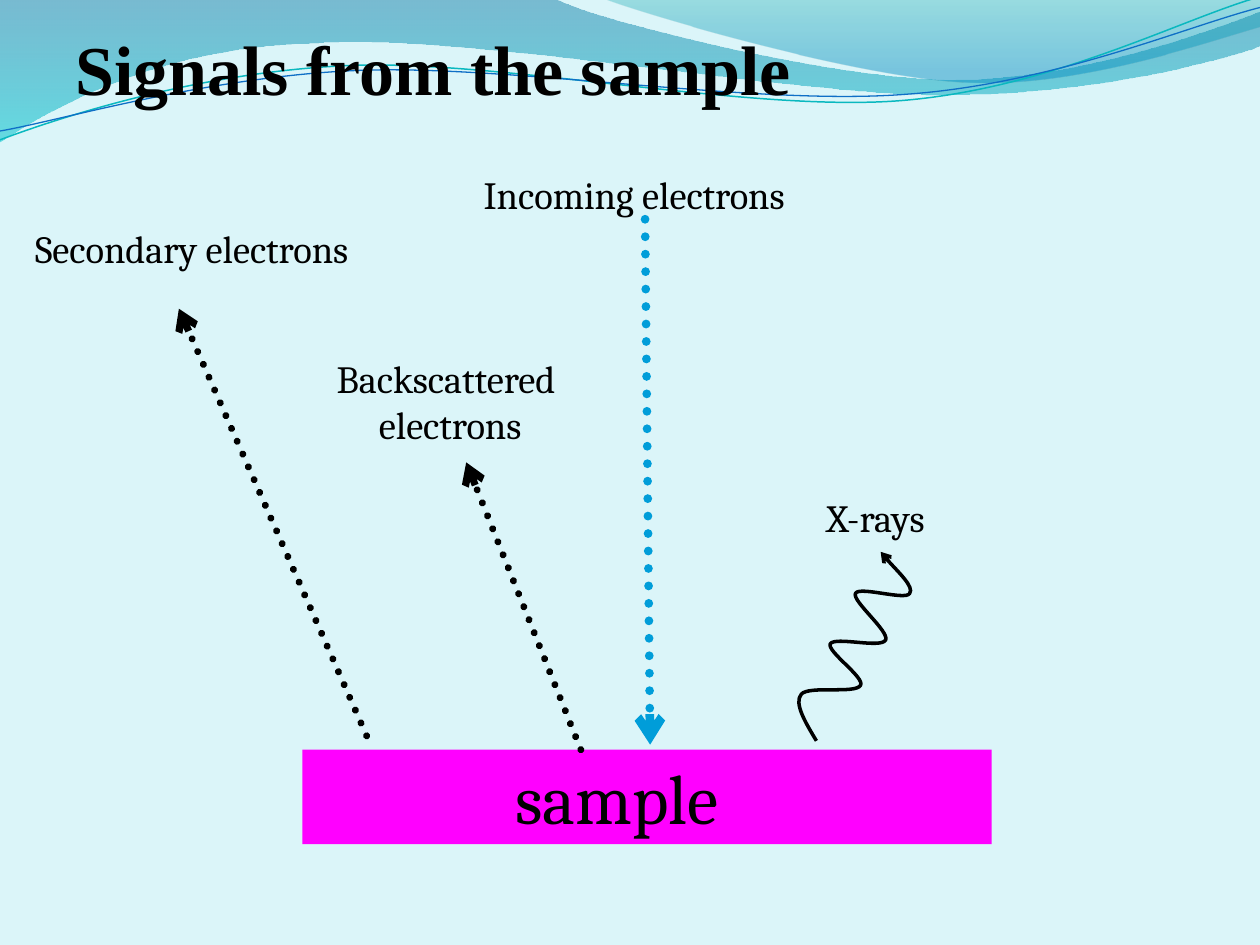
import dataclasses
import math

import lxml.etree
import pptx
import pptx.dml.color
import pptx.enum.dml
import pptx.enum.shapes
import pptx.enum.text
import pptx.oxml.ns
import pptx.util

Inches = pptx.util.Inches
Align = pptx.enum.text.PP_ALIGN
Anchor = pptx.enum.text.MSO_ANCHOR


@dataclasses.dataclass(frozen=True)
class Theme:
    background: str = "DBF5F9"
    ink: str = "000000"
    beam: str = "009DD9"
    sample: str = "FF00FF"
    teal_line: str = "0AB8BF"
    blue_line: str = "0F6FC6"
    broad_wave: tuple = ((0, "0074A1", 45), (1, "00C6CF", 55))
    right_wave: tuple = ((0, "00A1A9", 30), (0.8, "008BBF", 45))
    title_font: str = "Times New Roman"
    body_font: str = "Cambria"
    large: int = 40
    label: int = 22


THEME = Theme()


def color(code):
    return pptx.dml.color.RGBColor.from_string(code)


def add_child(parent, tag, **attributes):
    return lxml.etree.SubElement(parent, pptx.oxml.ns.qn(tag), **attributes)


def write(frame, text, size=THEME.label, font=THEME.body_font, bold=False, align=Align.LEFT):
    for index, line in enumerate(text.split("\n")):
        para = frame.paragraphs[0] if index == 0 else frame.add_paragraph()
        para.alignment = align
        span = para.add_run()
        span.text = line
        span.font.size = pptx.util.Pt(size)
        span.font.name = font
        span.font.bold = bold
        span.font.color.rgb = color(THEME.ink)


def turn(point, center, degrees):
    angle = math.radians(degrees)
    x, y = point[0] - center[0], point[1] - center[1]
    return (center[0] + x * math.cos(angle) - y * math.sin(angle),
            center[1] + x * math.sin(angle) + y * math.cos(angle))


class Painter:
    """Draws styled elements on the current slide."""

    def __init__(self, page, theme):
        self.page = page
        self.theme = theme
        page.background.fill.solid()
        page.background.fill.fore_color.rgb = color(theme.background)

    def style_line(self, line, code, width, arrow=False):
        line.color.rgb = color(code)
        line.width = pptx.util.Pt(width)
        if arrow:
            add_child(line._get_or_add_ln(), "a:tailEnd", type="arrow")

    def outline(self, start, pieces, closed, center=(0, 0), rotation=0):
        points = [start] + [piece[i:i + 2] for piece in pieces for i in range(0, len(piece), 2)]
        points = [tuple(map(Inches, turn(point, center, -rotation))) for point in points]
        builder = self.page.shapes.build_freeform(*points[0])
        builder.add_line_segments(points[1:], close=closed)
        shape = builder.convert_to_shape()
        shape.shadow.inherit = False
        shape.rotation = rotation
        segments = iter(list(shape._element.spPr.iter(pptx.oxml.ns.qn("a:lnTo"))))
        for piece in pieces:
            segment = next(segments)
            if len(piece) == 6:
                segment.tag = pptx.oxml.ns.qn("a:cubicBezTo")
                for follower in (next(segments), next(segments)):
                    segment.append(follower[0])
                    follower.getparent().remove(follower)
        return shape

    def wave(self, start, pieces, stops):
        shape = self.outline(start, pieces, True)
        shape.line.fill.background()
        shape.fill.gradient()
        shape.fill.gradient_angle = 270
        for stop, (position, code, opacity) in zip(shape.fill.gradient_stops, stops):
            stop.position = position
            stop.color.rgb = color(code)
        tints = shape._element.spPr.iter(pptx.oxml.ns.qn("a:srgbClr"))
        for tint, (position, code, opacity) in zip(tints, stops):
            add_child(tint, "a:alpha", val=str(opacity * 1000))

    def curve(self, start, pieces, code, width, arrow=False, **placing):
        shape = self.outline(start, pieces, False, **placing)
        shape.fill.background()
        self.style_line(shape.line, code, width, arrow)

    def ray(self, start, end, code, width):
        ends = [Inches(value) for value in start + end]
        ray = self.page.shapes.add_connector(pptx.enum.shapes.MSO_CONNECTOR.STRAIGHT, *ends)
        ray.line.dash_style = pptx.enum.dml.MSO_LINE.ROUND_DOT
        self.style_line(ray.line, code, width, True)
        ray.line._get_or_add_ln().set("cap", "rnd")
        add_child(ray._element.spPr, "a:effectLst")

    def text(self, text, left, top, width, height, wrap=False, inset=0.05, **style):
        box = self.page.shapes.add_textbox(*map(Inches, (left, top, width, height)))
        box.text_frame.word_wrap = wrap
        box.text_frame.margin_top = Inches(inset)
        write(box.text_frame, text, **style)

    def block(self, text, left, top, width, height, fill, indent, **style):
        shape = self.page.shapes.add_shape(
            pptx.enum.shapes.MSO_SHAPE.RECTANGLE, *map(Inches, (left, top, width, height)))
        shape.shadow.inherit = False
        shape.fill.solid()
        shape.fill.fore_color.rgb = color(fill)
        shape.line.fill.background()
        shape.text_frame.word_wrap = True
        shape.text_frame.margin_left = Inches(indent)
        shape.text_frame.vertical_anchor = Anchor.MIDDLE
        write(shape.text_frame, text, **style)


def main():
    deck = pptx.Presentation()
    deck.slide_width, deck.slide_height = Inches(10), Inches(7.5)
    painter = Painter(deck.slides.add_slide(deck.slide_layouts[6]), THEME)

    painter.wave((0, 0), [
        (4.4, -0.01), (4.76, 0.17, 6.64, 0.63, 7.58, 0.63),
        (8.53, 0.63, 9.58, 0.26, 10, 0.09), (10.01, 0.36),
        (9.83, 0.44, 8.7, 0.76, 7.46, 0.75), (6.22, 0.75, 3.82, 0.28, 2.57, 0.34),
        (1.29, 0.36, 0.46, 0.83, -0.01, 1.13), (0, 0)], THEME.broad_wave)
    painter.wave((4.79, -0.01), [
        (5.09, 0.11, 6.82, 0.62, 7.69, 0.65), (8.56, 0.69, 9.61, 0.32, 10, 0.21),
        (10, 0), (4.79, -0.01)], THEME.right_wave)
    painter.curve((0, 1.11), [
        (0.48, 0.93, 1.58, 0.57, 2.77, 0.52), (3.95, 0.47, 5.93, 0.89, 7.13, 0.8),
        (8.33, 0.71, 9.38, 0.15, 9.98, -0.02)],
        THEME.teal_line, 0.85, center=(4.99, 0.57), rotation=-2.7)
    painter.curve((0, 1.04), [
        (0.47, 0.96, 1.64, 0.61, 2.83, 0.56), (4.03, 0.51, 5.97, 0.84, 7.17, 0.75),
        (8.36, 0.67, 9.41, 0.21, 10, 0.06)],
        THEME.blue_line, 0.75, center=(5, 0.59), rotation=-2.7)

    painter.text("Signals from the sample", 0.5, 0.13, 9, 0.93, wrap=True, inset=0.07,
                 size=THEME.large, font=THEME.title_font, bold=True)
    painter.block("sample", 2.4, 5.95, 5.47, 0.75, THEME.sample, 1.69, size=THEME.large)

    painter.ray((5.12, 1.74), (5.16, 5.91), THEME.beam, 5)
    painter.text("Incoming electrons", 3.74, 1.31, 2.77, 0.47)
    painter.ray((2.91, 5.84), (1.42, 2.45), THEME.ink, 4)
    painter.ray((4.61, 5.95), (3.7, 3.67), THEME.ink, 4)
    painter.text("Secondary electrons", 0.18, 1.74, 2.99, 0.47)
    painter.text("Backscattered\n electrons", 2.47, 2.77, 2.14, 0.83, align=Align.CENTER)
    painter.curve((6.48, 5.88), [
        (6.39, 5.73, 6.3, 5.58, 6.36, 5.51), (6.42, 5.44, 6.79, 5.51, 6.83, 5.44),
        (6.87, 5.38, 6.56, 5.17, 6.59, 5.11), (6.63, 5.05, 6.99, 5.15, 7.03, 5.08),
        (7.06, 5.01, 6.76, 4.77, 6.79, 4.71), (6.82, 4.65, 7.19, 4.77, 7.22, 4.71),
        (7.26, 4.66, 7.03, 4.44, 6.99, 4.38)], THEME.ink, 2, arrow=True)
    painter.text("X-rays", 6.46, 3.87, 1.09, 0.47)
    deck.save("out.pptx")


if __name__ == "__main__":
    main()
